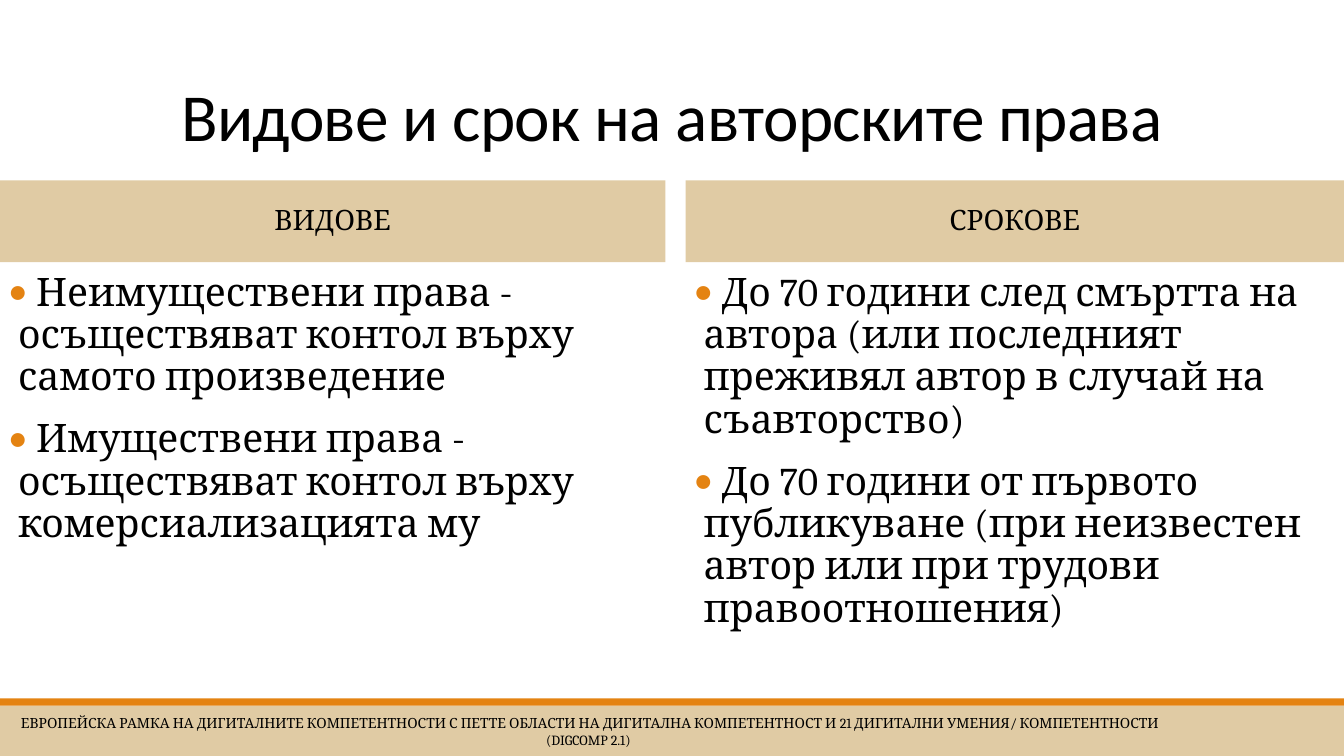
from dataclasses import dataclass

from lxml import etree
from pptx import Presentation
from pptx import util as u
from pptx.dml.color import RGBColor
from pptx.enum import shapes, text
from pptx.oxml import ns

COLORS = {"black": "000000", "sand": "E0CBA4", "orange": "E48312"}
BODY_SPACING = {"line": 0.9, "before": 12, "after": 2}


@dataclass
class Column:
    left: float
    width: float
    heading: str
    points: list[str]


COLUMNS = [
    Column(0, 6.6, "ВИДОВЕ", [
        " Неимуществени права - осъществяват контол върху самото произведение",
        " Имуществени права - осъществяват контол върху комерсиализацията му",
    ]),
    Column(6.8, 6.53, "СРОКОВЕ", [
        " До 70 години след смъртта на автора (или последният преживял автор "
        "в случай на съавторство)",
        " До 70 години от първото публикуване (при неизвестен автор или при "
        "трудови правоотношения)",
    ]),
]
FOOTER = (
    " ЕВРОПЕЙСКА РАМКА НА ДИГИТАЛНИТЕ КОМПЕТЕНТНОСТИ С ПЕТТЕ ОБЛАСТИ НА "
    "ДИГИТАЛНА КОМПЕТЕНТНОСТ И 21 ДИГИТАЛНИ УМЕНИЯ/ КОМПЕТЕНТНОСТИ (DIGCOMP 2.1)"
)


def rgb(name: str) -> RGBColor:
    return RGBColor.from_string(COLORS[name])


def add_bullet(p) -> None:
    pPr = p._p.get_or_add_pPr()
    pPr.set("marL", str(u.Inches(0.1)))
    pPr.set("indent", str(u.Inches(-0.1)))
    color = etree.SubElement(pPr, ns.qn("a:buClr"))
    etree.SubElement(color, ns.qn("a:srgbClr"), val=COLORS["orange"])
    etree.SubElement(pPr, ns.qn("a:buFont"), typeface="Calibri")
    etree.SubElement(pPr, ns.qn("a:buChar"), char="•")


def write(sp, lines: list[str], *, size: float, font: str = "Cambria",
          align=text.PP_ALIGN.CENTER, anchor=text.MSO_ANCHOR.MIDDLE,
          inset_x: float = 0.1, inset_y: float = 0.08, line: float = 1,
          before: float = 0, after: float = 0, bullet: bool = False,
          tracking: float = 0) -> None:
    tf = sp.text_frame
    tf.word_wrap = True
    tf.auto_size = text.MSO_AUTO_SIZE.NONE
    tf.vertical_anchor = anchor
    tf.margin_left = tf.margin_right = u.Inches(inset_x)
    tf.margin_top = tf.margin_bottom = u.Inches(inset_y)
    for i, content in enumerate(lines):
        p = tf.add_paragraph() if i else tf.paragraphs[0]
        p.alignment = align
        p.line_spacing = line
        p.space_before, p.space_after = u.Pt(before), u.Pt(after)
        if bullet:
            add_bullet(p)
        r = p.add_run()
        r.text = content
        r.font.size, r.font.name = u.Pt(size), font
        r.font.color.rgb = rgb("black")
        if tracking:
            r.font._element.set("spc", str(round(tracking * 100)))


def add_bar(s, left: float, top: float, width: float, height: float, color: str):
    sp = s.shapes.add_shape(shapes.MSO_SHAPE.RECTANGLE, u.Inches(left),
                            u.Inches(top), u.Inches(width), u.Inches(height))
    sp.shadow.inherit = False
    sp.fill.solid()
    sp.fill.fore_color.rgb = rgb(color)
    sp.line.fill.background()
    return sp


def add_box(s, left: float, top: float, width: float, height: float):
    return s.shapes.add_textbox(u.Inches(left), u.Inches(top),
                                u.Inches(width), u.Inches(height))


def add_column(s, column: Column) -> None:
    heading = add_bar(s, column.left, 1.79, column.width, 0.81, "sand")
    write(heading, [column.heading], size=20, **BODY_SPACING)
    body = add_box(s, column.left, 2.62, column.width, 4.28)
    write(body, column.points, size=28, align=text.PP_ALIGN.LEFT,
          anchor=text.MSO_ANCHOR.TOP, inset_x=0.08, bullet=True, **BODY_SPACING)


def main() -> None:
    prs = Presentation()
    prs.slide_width, prs.slide_height = u.Inches(13.33), u.Inches(7.5)
    s = prs.slides.add_slide(prs.slide_layouts[5])

    add_bar(s, 0, 7, 13.33, 0.5, "sand")
    add_bar(s, 0, 6.93, 13.33, 0.07, "orange")

    title = s.shapes.title
    title.left, title.top = u.Inches(0), u.Inches(0)
    title.width, title.height = u.Inches(13.33), u.Inches(1.59)
    write(title, ["Видове и срок на авторските права"], size=48, font="Calibri",
          anchor=text.MSO_ANCHOR.BOTTOM, inset_y=0.05, line=0.85, tracking=-0.5)

    for column in COLUMNS:
        add_column(s, column)

    footer = add_box(s, 0, 7.06, 11.67, 0.4)
    write(footer, [FOOTER], size=10, inset_x=0.04, inset_y=0.04)

    prs.save("out.pptx")


if __name__ == "__main__":
    main()
